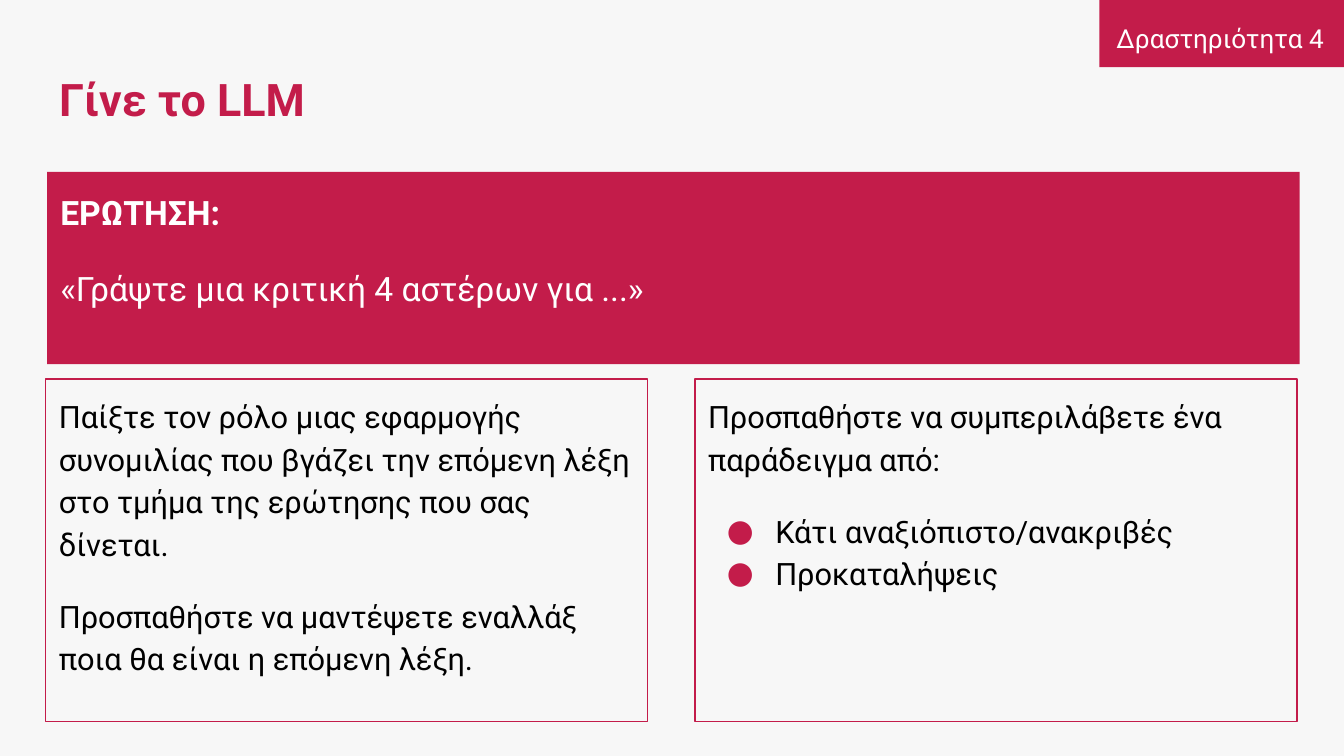
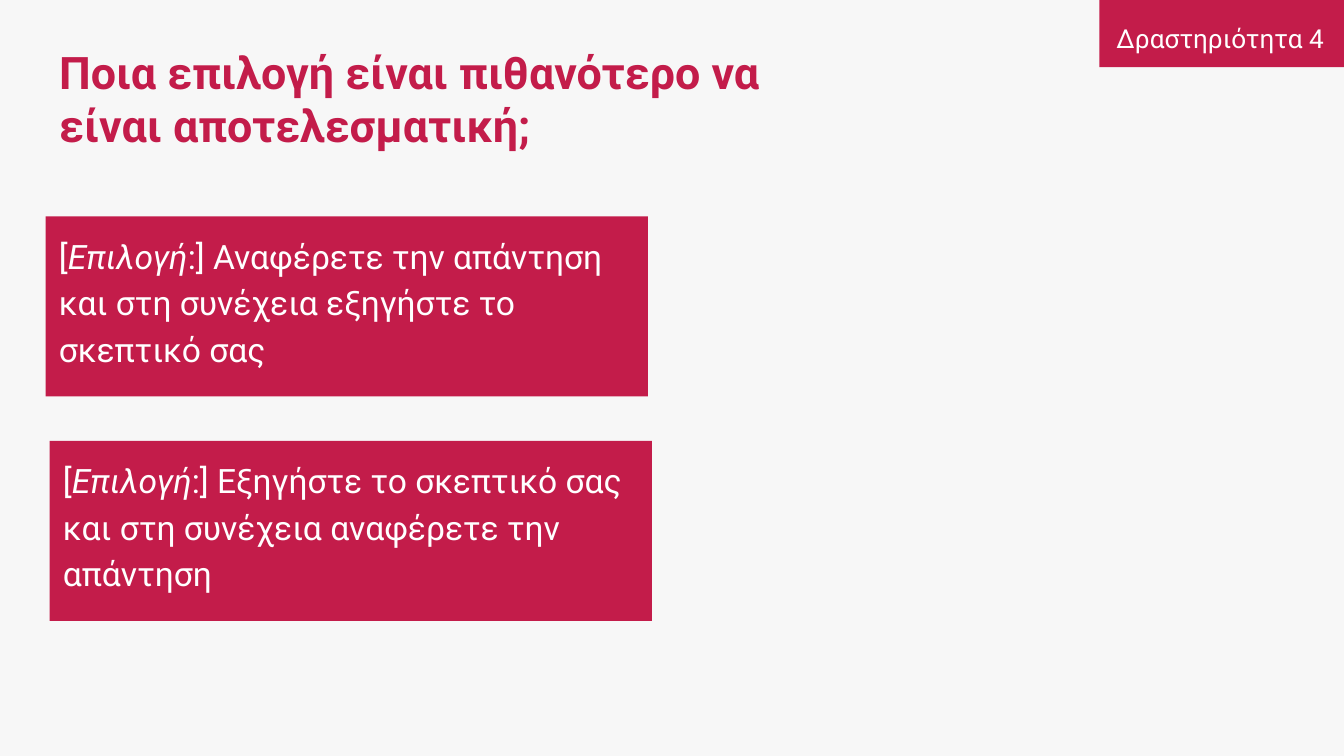
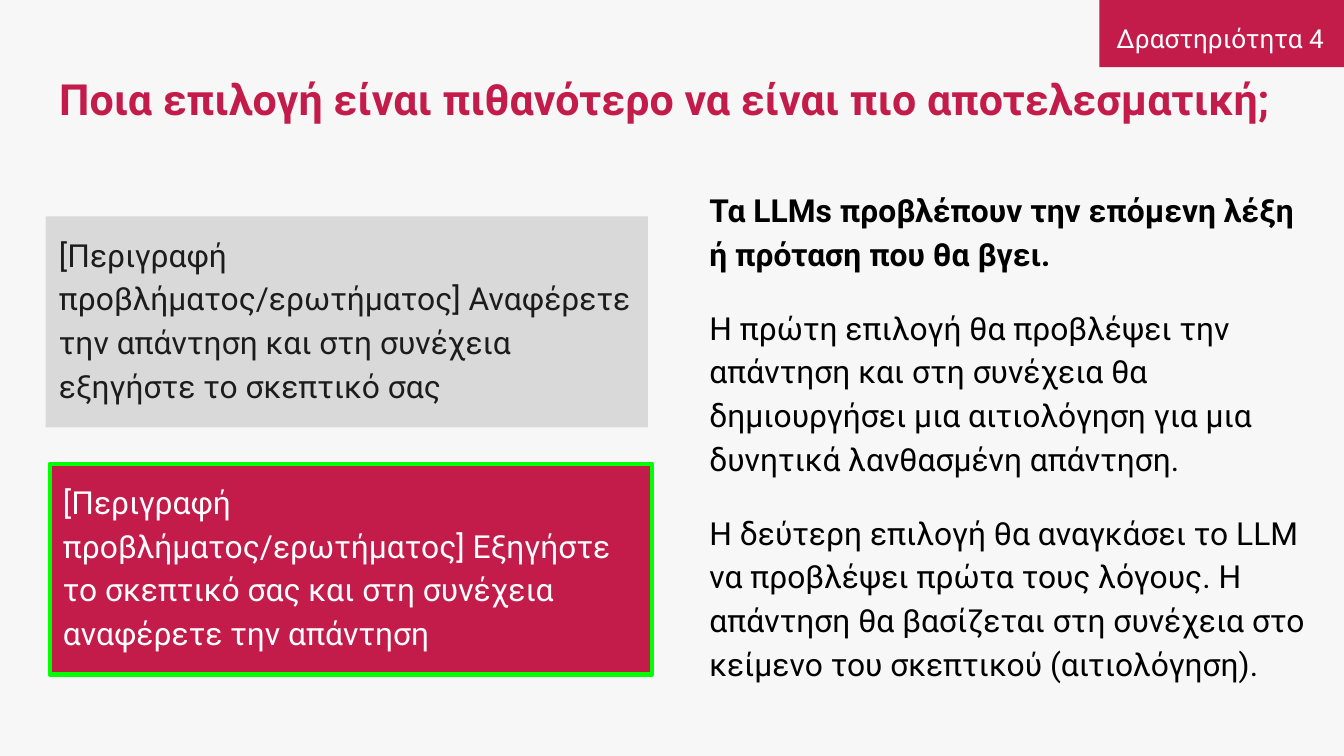
from lxml.etree import SubElement
from pptx import Presentation
from pptx.dml.color import RGBColor
from pptx.enum.shapes import MSO_SHAPE
from pptx.enum.text import MSO_ANCHOR, MSO_AUTO_SIZE, PP_ALIGN
from pptx.oxml.ns import qn
from pptx.util import Inches, Pt

# Content: a paragraph is a dict, its runs are (text, is_italic) pairs or one string
ACTIVITY = "Δραστηριότητα 4"

QUESTION = [
    dict(runs="ΕΡΩΤΗΣΗ:", bold=True),
    dict(runs="«Γράψτε μια κριτική 4 αστέρων για ...»", before=16, after=16),
]
ROLE = [
    dict(runs="Παίξτε τον ρόλο μιας εφαρμογής συνομιλίας που βγάζει την επόμενη λέξη "
              "στο τμήμα της ερώτησης που σας δίνεται."),
    dict(runs="Προσπαθήστε να μαντέψετε εναλλάξ ποια θα είναι η επόμενη λέξη.",
         before=16, after=16),
]
EXAMPLES = [
    dict(runs="Προσπαθήστε να συμπεριλάβετε ένα παράδειγμα από:"),
    dict(runs="Κάτι αναξιόπιστο/ανακριβές", before=16, bullet=True),
    dict(runs="Προκαταλήψεις", bullet=True),
]
OPTIONS = [
    "Αναφέρετε την απάντηση και στη συνέχεια εξηγήστε το σκεπτικό σας",
    "Εξηγήστε το σκεπτικό σας και στη συνέχεια αναφέρετε την απάντηση",
]
EXPLANATION = [
    dict(runs="Τα LLMs προβλέπουν την επόμενη λέξη ή πρόταση που θα βγει.", bold=True),
    dict(runs="Η πρώτη επιλογή θα προβλέψει την απάντηση και στη συνέχεια θα δημιουργήσει "
              "μια αιτιολόγηση για μια δυνητικά λανθασμένη απάντηση.", before=16),
    dict(runs="Η δεύτερη επιλογή θα αναγκάσει το LLM να προβλέψει πρώτα τους λόγους. "
              "Η απάντηση θα βασίζεται στη συνέχεια στο κείμενο του σκεπτικού "
              "(αιτιολόγηση).", before=16),
]

# Shared style and grid, in inches
COLORS = dict(background="F7F7F7", crimson="C31C4A", white="FFFFFF", black="000000",
              grey="D9D9D9", ink="1D1C1D", green="00FF00")
FONT = "Roboto"
WIDTH = 10
HEIGHT = WIDTH * 9 / 16
MARGIN, COLUMN, GAP = 0.34, 4.48, 0.35
FULL = WIDTH - 2 * MARGIN
RIGHT = MARGIN + COLUMN + GAP
INSET = 0.1
BAND_TOP, OPTION_TOP, OPTION_SHIFT = 1.28, 1.61, 0.03


def color(name):
    return RGBColor.from_string(COLORS[name])


def add_bullet(paragraph):
    properties = paragraph._p.get_or_add_pPr()
    properties.set("marL", str(Inches(0.5)))
    properties.set("indent", str(Inches(-0.36)))
    bullet_color = SubElement(properties, qn("a:buClr"))
    SubElement(bullet_color, qn("a:srgbClr")).set("val", COLORS["crimson"])
    SubElement(properties, qn("a:buFont")).set("typeface", FONT)
    SubElement(properties, qn("a:buChar")).set("char", "●")


def write(shape, paragraphs, size=18, ink="white", align=PP_ALIGN.LEFT,
          anchor=MSO_ANCHOR.TOP, spacing=1.15):
    frame = shape.text_frame
    frame.word_wrap = True
    frame.auto_size = MSO_AUTO_SIZE.NONE
    frame.vertical_anchor = anchor
    frame.margin_left = frame.margin_right = Inches(INSET)
    frame.margin_top = frame.margin_bottom = Inches(INSET)
    for index, content in enumerate(paragraphs):
        paragraph = frame.add_paragraph() if index else frame.paragraphs[0]
        paragraph.alignment = align
        paragraph.line_spacing = spacing
        paragraph.space_before = Pt(content.get("before", 0))
        paragraph.space_after = Pt(content.get("after", 0))
        if content.get("bullet"):
            add_bullet(paragraph)
        runs = content["runs"]
        for text, italic in [(runs, False)] if isinstance(runs, str) else runs:
            for line_number, line in enumerate(text.split("\n")):
                if line_number:
                    paragraph.add_line_break()
                run = paragraph.add_run()
                run.text = line
                run.font.name = FONT
                run.font.size = Pt(size)
                run.font.bold = content.get("bold", False)
                run.font.italic = italic
                run.font.color.rgb = color(ink)


def add_box(slide, left, top, width, height, fill=None, line=None, line_width=0.75):
    box = slide.shapes.add_shape(MSO_SHAPE.RECTANGLE, Inches(left), Inches(top),
                                 Inches(width), Inches(height))
    box.shadow.inherit = False
    if fill:
        box.fill.solid()
        box.fill.fore_color.rgb = color(fill)
    else:
        box.fill.background()
    if line:
        box.line.color.rgb = color(line)
        box.line.width = Pt(line_width)
    else:
        box.line.fill.background()
    return box


def add_text(slide, left, top, width, height, paragraphs, **style):
    box = slide.shapes.add_textbox(Inches(left), Inches(top), Inches(width), Inches(height))
    write(box, paragraphs, **style)


def add_slide(presentation, title, size=24):
    slide = presentation.slides.add_slide(presentation.slide_layouts[5])
    add_box(slide, 8.18, 0, 1.82, 0.5, fill="crimson")
    add_text(slide, 8.16, 0.03, 1.84, 0.42, [dict(runs=ACTIVITY, after=16)],
             size=14, align=PP_ALIGN.CENTER)
    heading = slide.shapes.title
    heading.left, heading.top = Inches(MARGIN), Inches(0.35)
    heading.width, heading.height = Inches(FULL), Inches(0.76)
    write(heading, [dict(runs=title, bold=True)], size=size, ink="crimson",
          anchor=MSO_ANCHOR.MIDDLE, spacing=1.0)
    return slide


def add_options(slide, prefix, height, gap, size, styles):
    for index, (option, (box_style, ink)) in enumerate(zip(OPTIONS, styles)):
        box = add_box(slide, MARGIN + index * OPTION_SHIFT,
                      OPTION_TOP + index * (height + gap), COLUMN, height, **box_style)
        write(box, [dict(runs=prefix + [(" " + option, False)], after=16)],
              size=size, ink=ink)


def main():
    presentation = Presentation()
    presentation.slide_width, presentation.slide_height = Inches(WIDTH), Inches(HEIGHT)
    background = presentation.slide_master.background.fill
    background.solid()
    background.fore_color.rgb = color("background")

    # Slide 1: question band above two outlined columns
    slide = add_slide(presentation, "Γίνε το LLM")
    write(add_box(slide, 0.35, BAND_TOP, FULL, 1.43, fill="crimson"), QUESTION)
    for left, paragraphs in ((MARGIN, ROLE), (RIGHT, EXAMPLES)):
        box = add_box(slide, left, 2.82, COLUMN, 2.55, line="crimson")
        write(box, paragraphs, size=16.5, ink="black")

    # Slide 2: the two options
    slide = add_slide(presentation, "Ποια επιλογή είναι πιθανότερο να \nείναι αποτελεσματική;")
    crimson_box = (dict(fill="crimson"), "white")
    add_options(slide, [("[", False), ("Επιλογή", True), (":]", False)],
                height=1.34, gap=0.33, size=18, styles=[crimson_box, crimson_box])

    # Slide 3: the better option marked, with the explanation
    slide = add_slide(presentation,
                      "Ποια επιλογή είναι πιθανότερο να είναι πιο αποτελεσματική;", size=23)
    add_options(slide, [("[Περιγραφή προβλήματος/ερωτήματος]", False)],
                height=1.57, gap=0.27, size=17,
                styles=[(dict(fill="grey"), "ink"),
                        (dict(fill="crimson", line="green", line_width=2.25), "white")])
    add_text(slide, RIGHT + 0.01, BAND_TOP, 4.67, 4, EXPLANATION, size=17, ink="black")

    presentation.save("out.pptx")


if __name__ == "__main__":
    main()
